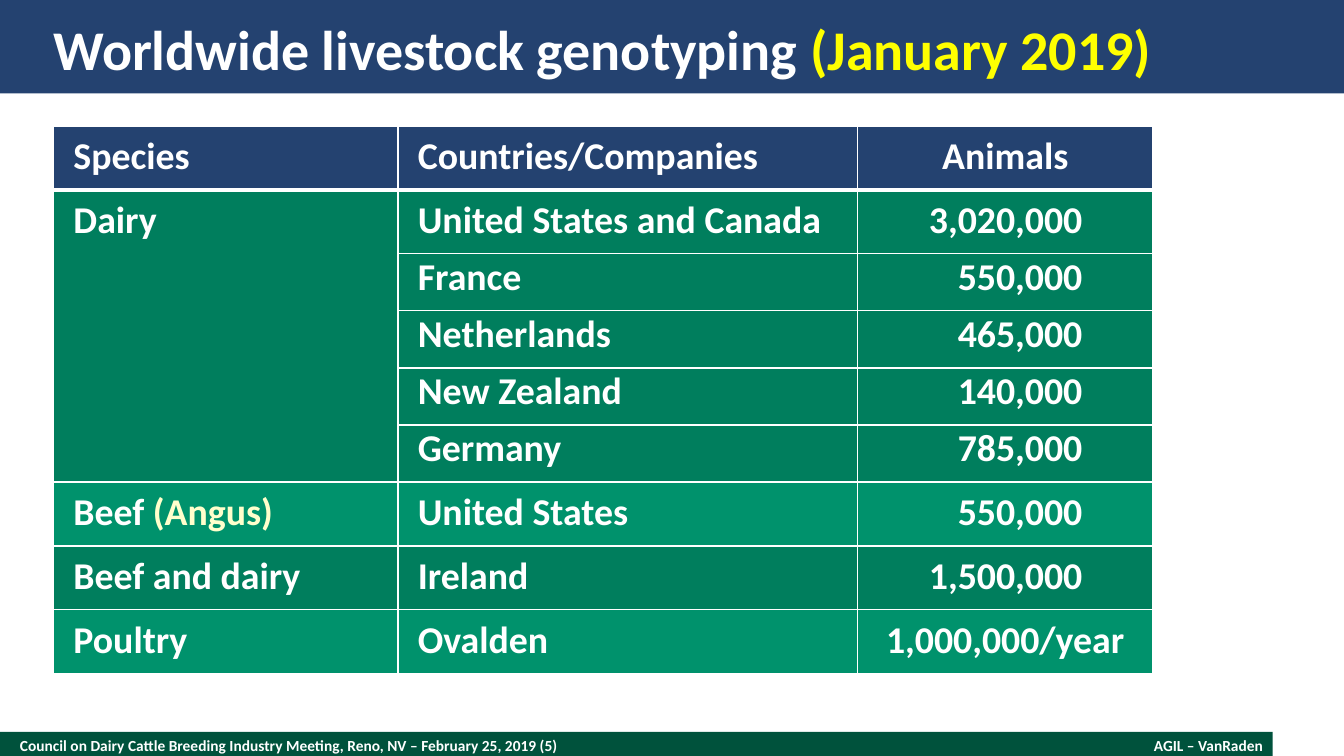
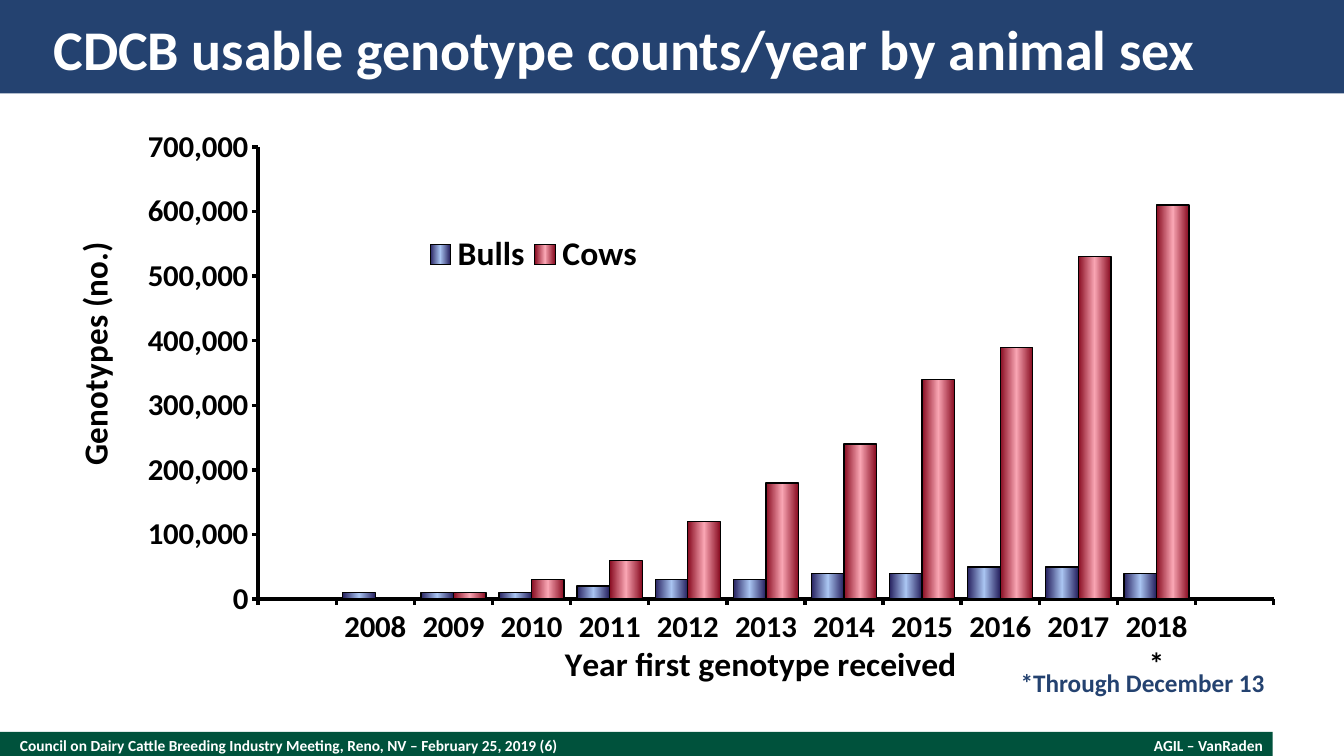
"""Build two slides on livestock genotyping: a table and a column chart."""
from dataclasses import dataclass
from typing import Any, NamedTuple

from pptx import Presentation
from pptx.chart.data import CategoryChartData
from pptx.dml.color import RGBColor
from pptx.enum.chart import XL_CHART_TYPE, XL_LEGEND_POSITION, XL_TICK_MARK
from pptx.enum.shapes import MSO_SHAPE
from pptx.enum.text import MSO_ANCHOR, MSO_AUTO_SIZE, PP_ALIGN
from pptx.oxml import parse_xml
from pptx.oxml.ns import nsdecls
from pptx.util import Pt

EMU_PER_PX = 9525


@dataclass(frozen=True)
class Theme:
    font: str = "Calibri"
    navy: RGBColor = RGBColor(0x24, 0x42, 0x70)
    forest: RGBColor = RGBColor(0x00, 0x52, 0x3C)
    green: RGBColor = RGBColor(0x00, 0x7E, 0x5D)
    light_green: RGBColor = RGBColor(0x00, 0x92, 0x6C)
    white: RGBColor = RGBColor(0xFF, 0xFF, 0xFF)
    yellow: RGBColor = RGBColor(0xFF, 0xFF, 0x00)
    cream: RGBColor = RGBColor(0xFF, 0xFF, 0xCC)
    black: RGBColor = RGBColor(0x00, 0x00, 0x00)
    title_size: int = 40
    table_size: int = 27
    table_leading: int = 28
    chart_size: int = 24
    tick_size: int = 22
    note_size: int = 18
    footer_size: int = 11


THEME = Theme()


class Box(NamedTuple):
    left: int
    top: int
    width: int
    height: int


class Run(NamedTuple):
    text: str
    color: RGBColor = THEME.white


class Row(NamedTuple):
    species: tuple[Run, ...]
    country: str
    animals: str
    fill: RGBColor
    compact: bool = False


class ChartSeries(NamedTuple):
    name: str
    values: tuple[int, ...]
    edge: str
    middle: str


class ChartPart(NamedTuple):
    xpath: str
    index: int
    settings: dict[str, Any]


BANDS = (
    (Box(0, 697, 1212, 23), THEME.forest),
    (Box(0, 0, 1280, 89), THEME.navy),
)
TITLE_BOX = Box(51, 12, 1178, 67)
FOOTER_BOX = Box(19, 701, 832, 18)
AUTHOR_BOX = Box(922, 701, 281, 18)
TABLE_BOX = Box(51, 120, 1047, 512)
CHART_BOX = Box(51, 122, 1203, 541)
NOTE_BOX = Box(972, 638, 245, 24)

COLUMN_WIDTHS = (328, 438, 281)
HEADERS = ("Species", "Countries/Companies", "Animals")
ROWS = (
    Row((Run("Dairy"),), "United States and Canada", "3,020,000", THEME.green),
    Row((), "France", "550,000", THEME.green, True),
    Row((), "Netherlands", "465,000", THEME.green, True),
    Row((), "New Zealand", "140,000", THEME.green, True),
    Row((), "Germany", "785,000", THEME.green, True),
    Row((Run("Beef "), Run("(Angus)", THEME.cream)), "United States", "550,000", THEME.light_green),
    Row((Run("Beef and dairy"),), "Ireland", "1,500,000", THEME.green),
    Row((Run("Poultry"),), "Ovalden", "1,000,000/year", THEME.light_green),
)
DAIRY_ROWS = (1, 5)

YEARS = ("", *(str(year) for year in range(2008, 2018)), "2018*", "")
SERIES = (
    ChartSeries(
        "Bulls",
        (10000, 10000, 10000, 20000, 30000, 30000, 40000, 40000, 50000, 50000, 40000),
        "26215F", "A9C4F1",
    ),
    ChartSeries(
        "Cows",
        (0, 10000, 30000, 60000, 120000, 180000, 240000, 340000, 390000, 530000, 610000),
        "870B20", "F9A5B3",
    ),
)
CHART_PARTS = (
    ChartPart("//c:plotArea", 0, {"layoutTarget": "inner", "xMode": "edge", "yMode": "edge",
                                  "x": 0.162, "y": 0.034, "w": 0.804, "h": 0.81}),
    ChartPart("//c:catAx/c:title", 1, {"xMode": "edge", "yMode": "edge", "x": 0.4, "y": 0.91}),
    ChartPart("//c:valAx/c:title", 1, {"xMode": "edge", "yMode": "edge", "x": 0.01, "y": 0.2}),
    ChartPart("//c:legend", 1, {"xMode": "edge", "yMode": "edge",
                                "x": 0.29, "y": 0.19, "w": 0.18, "h": 0.07}),
)


def px(length: int) -> int:
    """Convert pixels to EMU."""
    return length * EMU_PER_PX


def emu(box: Box) -> tuple[int, ...]:
    """Convert a box to EMU."""
    return tuple(px(length) for length in box)


def apply(target: Any, values: dict[str, Any]) -> None:
    """Set each named attribute on the target."""
    for name, value in values.items():
        setattr(target, name, value)


def style_font(font: Any, size: int, color: RGBColor) -> None:
    """Give a font the shared face and weight."""
    apply(font, {"name": THEME.font, "size": Pt(size), "bold": True})
    font.color.rgb = color


def write_runs(paragraph: Any, runs: tuple[Run, ...], size: int) -> None:
    """Add formatted runs to a paragraph."""
    for item in runs:
        run = paragraph.add_run()
        run.text = item.text
        style_font(run.font, size, item.color)


def format_frame(frame: Any, anchor: MSO_ANCHOR) -> None:
    """Remove margins and set wrapping and anchor."""
    margins = dict.fromkeys(("margin_left", "margin_top", "margin_right", "margin_bottom"), 0)
    apply(frame, {**margins, "word_wrap": True, "auto_size": MSO_AUTO_SIZE.NONE,
                  "vertical_anchor": anchor})


def add_text(slide: Any, box: Box, run: Run, size: int, align: PP_ALIGN = PP_ALIGN.LEFT) -> Any:
    """Add a one-line text box."""
    shape = slide.shapes.add_textbox(*emu(box))
    format_frame(shape.text_frame, MSO_ANCHOR.MIDDLE)
    paragraph = shape.text_frame.paragraphs[0]
    paragraph.alignment = align
    write_runs(paragraph, (run,), size)
    return shape


def add_band(slide: Any, box: Box, color: RGBColor) -> Any:
    """Add a plain filled rectangle."""
    shape = slide.shapes.add_shape(MSO_SHAPE.RECTANGLE, *emu(box))
    shape.shadow.inherit = False
    shape.fill.solid()
    shape.fill.fore_color.rgb = color
    shape.line.fill.background()
    return shape


def prepare_layout(slide: Any) -> None:
    """Put the bands, author and title position on the layout."""
    layout = slide.slide_layout
    for placeholder in list(layout.placeholders)[1:]:
        placeholder.element.getparent().remove(placeholder.element)
    apply(layout.placeholders[0], dict(zip(Box._fields, emu(TITLE_BOX))))
    shapes = [add_band(slide, box, color) for box, color in BANDS]
    shapes.append(add_text(slide, AUTHOR_BOX, Run("AGIL – VanRaden"), THEME.footer_size, PP_ALIGN.RIGHT))
    for shape in shapes:
        layout.shapes.element.append(shape.element)


def add_heading(slide: Any, runs: tuple[Run, ...], number: int) -> None:
    """Fill the title and add the numbered footer."""
    frame = slide.shapes.title.text_frame
    format_frame(frame, MSO_ANCHOR.MIDDLE)
    frame.paragraphs[0].alignment = PP_ALIGN.LEFT
    write_runs(frame.paragraphs[0], runs, THEME.title_size)
    footer = f"Council on Dairy Cattle Breeding Industry Meeting, Reno, NV – February 25, 2019 ({number})"
    add_text(slide, FOOTER_BOX, Run(footer), THEME.footer_size)


def format_cell(cell: Any, fill: RGBColor, widths: dict[str, int], right: int = 19) -> None:
    """Set margins, borders and fill of a table cell."""
    apply(cell, {"margin_left": px(19), "margin_top": px(7), "margin_right": px(right),
                 "margin_bottom": px(10), "vertical_anchor": MSO_ANCHOR.MIDDLE})
    properties = cell._tc.get_or_add_tcPr()
    for side in "LRTB":
        properties.append(parse_xml(
            f'<a:ln{side} {nsdecls("a")} w="{Pt(widths.get(side, 1))}"><a:solidFill>'
            f'<a:srgbClr val="{THEME.white}"/></a:solidFill></a:ln{side}>'))
    cell.fill.solid()
    cell.fill.fore_color.rgb = fill


def add_genotype_table(slide: Any) -> None:
    """Add the table of species, countries and animals."""
    table = slide.shapes.add_table(len(ROWS) + 1, len(HEADERS), *emu(TABLE_BOX)).table
    for column, width in zip(table.columns, COLUMN_WIDTHS):
        column.width = px(width)
    table.rows[0].height = px(60)
    for index, header in enumerate(HEADERS):
        cell = table.cell(0, index)
        format_cell(cell, THEME.navy, {"B": 3})
        paragraph = cell.text_frame.paragraphs[0]
        paragraph.alignment = PP_ALIGN.CENTER if index == 2 else PP_ALIGN.LEFT
        write_runs(paragraph, (Run(header),), THEME.table_size)
    for number, row in enumerate(ROWS, 1):
        table.rows[number].height = px(53 if row.compact else 60)
        numeric = row.animals.replace(",", "").isdigit()
        contents = (row.species, (Run(row.country),), (Run(row.animals),))
        aligns = (PP_ALIGN.LEFT, PP_ALIGN.LEFT, PP_ALIGN.RIGHT if numeric else PP_ALIGN.CENTER)
        for index, (runs, align) in enumerate(zip(contents, aligns)):
            cell = table.cell(number, index)
            format_cell(cell, row.fill, {"T": 3} if number == 1 else {},
                        67 if align == PP_ALIGN.RIGHT else 19)
            paragraph = cell.text_frame.paragraphs[0]
            paragraph.alignment = align
            if row.compact:
                paragraph.line_spacing = Pt(THEME.table_leading)
            write_runs(paragraph, runs, THEME.table_size)
    first, last = DAIRY_ROWS
    table.cell(first, 0).merge(table.cell(last, 0))
    table.cell(first, 0).vertical_anchor = MSO_ANCHOR.TOP


def place_chart_part(chart: Any, part: ChartPart) -> None:
    """Give a part of the chart a manual layout."""
    element = chart.element.xpath(part.xpath)[0]
    for layout in element.xpath("./c:layout"):
        element.remove(layout)
    settings = "".join(f'<c:{name} val="{value}"/>' for name, value in part.settings.items())
    element.insert(part.index, parse_xml(
        f'<c:layout {nsdecls("c")}><c:manualLayout>{settings}</c:manualLayout></c:layout>'))


def format_axis(axis: Any, title: str) -> None:
    """Set title, ticks, labels and line of an axis."""
    apply(axis, {"has_major_gridlines": False, "major_tick_mark": XL_TICK_MARK.OUTSIDE,
                 "minor_tick_mark": XL_TICK_MARK.NONE})
    style_font(axis.tick_labels.font, THEME.tick_size, THEME.black)
    axis.format.line.color.rgb = THEME.black
    axis.format.line.width = Pt(2.5)
    paragraph = axis.axis_title.text_frame.paragraphs[0]
    write_runs(paragraph, (Run(title, THEME.black),), THEME.chart_size)


def add_genotype_chart(slide: Any) -> None:
    """Add the column chart of yearly genotypes."""
    data = CategoryChartData(number_format="#,##0")
    data.categories = YEARS
    for item in SERIES:
        data.add_series(item.name, (None, *item.values, None))
    chart = slide.shapes.add_chart(XL_CHART_TYPE.COLUMN_CLUSTERED, *emu(CHART_BOX), data).chart
    apply(chart, {"has_title": False, "has_legend": True})
    style_font(chart.font, THEME.chart_size, THEME.black)
    apply(chart.legend, {"position": XL_LEGEND_POSITION.RIGHT, "include_in_layout": False})
    style_font(chart.legend.font, THEME.chart_size, THEME.black)
    apply(chart.plots[0], {"gap_width": 40, "overlap": 0, "vary_by_categories": False})
    format_axis(chart.category_axis, "Year first genotype received")
    format_axis(chart.value_axis, "Genotypes (no.)")
    apply(chart.value_axis, {"minimum_scale": 0, "maximum_scale": 700000, "major_unit": 100000})
    apply(chart.value_axis.tick_labels, {"number_format": "#,##0", "number_format_is_linked": False})
    for body in chart.element.xpath("//c:valAx/c:title//a:bodyPr"):
        body.set("rot", "-5400000")
        body.set("vert", "horz")
    for index, (series, item) in enumerate(zip(chart.plots[0].series, SERIES)):
        series.format.line.color.rgb = THEME.black
        series.format.line.width = Pt(1)
        stops = "".join(
            f'<a:gs pos="{position}"><a:srgbClr val="{color}"/></a:gs>'
            for position, color in ((0, item.edge), (50000, item.middle), (100000, item.edge)))
        chart.element.xpath("//c:ser/c:spPr")[index].insert(0, parse_xml(
            f'<a:gradFill {nsdecls("a")}><a:gsLst>{stops}</a:gsLst><a:lin ang="0" scaled="1"/></a:gradFill>'))
    for part in CHART_PARTS:
        place_chart_part(chart, part)


def main() -> None:
    """Build and save the presentation."""
    presentation = Presentation()
    apply(presentation, {"slide_width": px(1280), "slide_height": px(720)})
    layout = presentation.slide_layouts[5]
    table_slide, chart_slide = (presentation.slides.add_slide(layout) for _ in range(2))
    prepare_layout(table_slide)
    add_heading(table_slide, (Run("Worldwide livestock genotyping "), Run("(January 2019)", THEME.yellow)), 5)
    add_genotype_table(table_slide)
    add_heading(chart_slide, (Run("CDCB usable genotype counts/year by animal sex"),), 6)
    add_genotype_chart(chart_slide)
    add_text(chart_slide, NOTE_BOX, Run("*Through December 13", THEME.navy), THEME.note_size)
    presentation.save("out.pptx")


if __name__ == "__main__":
    main()
